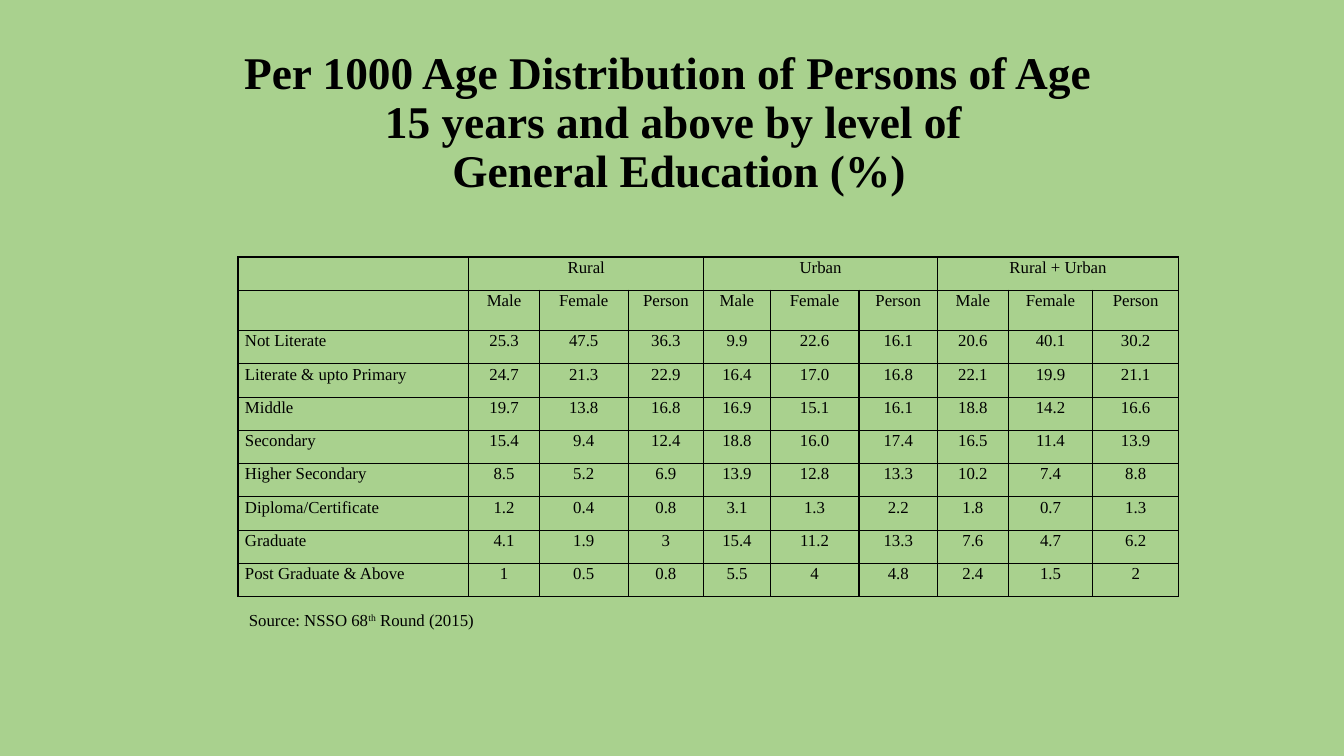
"""Build a slide with a table of education levels by area and sex."""
import pptx
import pptx.dml.color
import pptx.enum.text
import pptx.oxml
import pptx.oxml.ns
import pptx.util
from pptx.util import Inches

THEME = {"font": "Times New Roman", "bg": "A9D18E", "ink": "000000",
         "title": 32.4, "body": 12, "border": 1}
ALIGN = pptx.enum.text.PP_ALIGN
MIDDLE = pptx.enum.text.MSO_ANCHOR.MIDDLE


def write(p, text, size=THEME["body"], bold=False, align=None, spacing=None, baseline=None):
    """Append formatted text to a paragraph, with a line break at each newline."""
    p.alignment = align
    p.line_spacing = spacing
    for i, line in enumerate(text.split("\n")):
        if i:
            p.add_line_break()
        r = p.add_run()
        r.text = line
        r.font.name = THEME["font"]
        r.font.size = pptx.util.Pt(size)
        r.font.bold = bold
        r.font.color.rgb = pptx.dml.color.RGBColor.from_string(THEME["ink"])
        if baseline:
            r.font._element.set("baseline", str(baseline))


def add_borders(cell):
    """Draw a thin line on all four sides of a cell."""
    tcPr = cell._tc.get_or_add_tcPr()
    for i, side in enumerate(("lnL", "lnR", "lnT", "lnB")):
        ln = pptx.oxml.parse_xml(
            f'<a:{side} {pptx.oxml.ns.nsdecls("a")} w="{pptx.util.Pt(THEME["border"])}">'
            f'<a:solidFill><a:srgbClr val="{THEME["ink"]}"/></a:solidFill></a:{side}>')
        tcPr.insert(i, ln)


prs = pptx.Presentation()
prs.slide_width, prs.slide_height = Inches(13.33), Inches(7.5)
s = prs.slides.add_slide(prs.slide_layouts[6])
s.background.fill.solid()
s.background.fill.fore_color.rgb = pptx.dml.color.RGBColor.from_string(THEME["bg"])

tf = s.shapes.add_textbox(Inches(0.93), Inches(0.5), Inches(11.5), Inches(1.45)).text_frame
tf.word_wrap = True
tf.vertical_anchor = MIDDLE
write(tf.paragraphs[0],
      "Per 1000 Age Distribution of Persons of Age \n15 years and above by level of\n General Education (%)",
      size=THEME["title"], bold=True, align=ALIGN.CENTER, spacing=0.9)

areas = ["Rural", "Urban", "Rural + Urban"]
sexes = ["Male", "Female", "Person"]
levels = [
    ("Not Literate", "25.3 47.5 36.3 9.9 22.6 16.1 20.6 40.1 30.2"),
    ("Literate & upto Primary", "24.7 21.3 22.9 16.4 17.0 16.8 22.1 19.9 21.1"),
    ("Middle", "19.7 13.8 16.8 16.9 15.1 16.1 18.8 14.2 16.6"),
    ("Secondary", "15.4 9.4 12.4 18.8 16.0 17.4 16.5 11.4 13.9"),
    ("Higher Secondary", "8.5 5.2 6.9 13.9 12.8 13.3 10.2 7.4 8.8"),
    ("Diploma/Certificate", "1.2 0.4 0.8 3.1 1.3 2.2 1.8 0.7 1.3"),
    ("Graduate", "4.1 1.9 3 15.4 11.2 13.3 7.6 4.7 6.2"),
    ("Post Graduate & Above", "1 0.5 0.8 5.5 4 4.8 2.4 1.5 2"),
]
area_row = [""]
for area in areas:
    area_row += [area, "", ""]
rows = [area_row, [""] + sexes * len(areas)]
rows += [[level] + values.split() for level, values in levels]
col_widths = [2.29, 0.7, 0.88, 0.75, 0.66, 0.88, 0.78, 0.7, 0.84, 0.85]
row_heights = [0.33, 0.4] + [0.33] * len(levels)

table = s.shapes.add_table(len(rows), len(col_widths), Inches(2.36), Inches(2.55),
                           Inches(sum(col_widths)), Inches(sum(row_heights))).table
table.first_row = table.horz_banding = False
for col, width in zip(table.columns, col_widths):
    col.width = Inches(width)
for row, height in zip(table.rows, row_heights):
    row.height = Inches(height)
for first in range(1, len(col_widths), len(sexes)):
    table.cell(0, first).merge(table.cell(0, first + len(sexes) - 1))

for i, row in enumerate(rows):
    for j, text in enumerate(row):
        cell = table.cell(i, j)
        cell.fill.background()
        add_borders(cell)
        cell.margin_left = cell.margin_right = Inches(0.07)
        cell.margin_top = cell.margin_bottom = 0
        if text:
            write(cell.text_frame.paragraphs[0], text, spacing=1.07,
                  align=ALIGN.CENTER if j else ALIGN.JUSTIFY)

tf = s.shapes.add_textbox(Inches(2.37), Inches(5.95), Inches(2.77), Inches(0.39)).text_frame
tf.word_wrap = True
tf.vertical_anchor = MIDDLE
p = tf.paragraphs[0]
write(p, "Source: NSSO 68")
write(p, "th", baseline=30000)
write(p, " Round (2015)")

prs.save("out.pptx")
